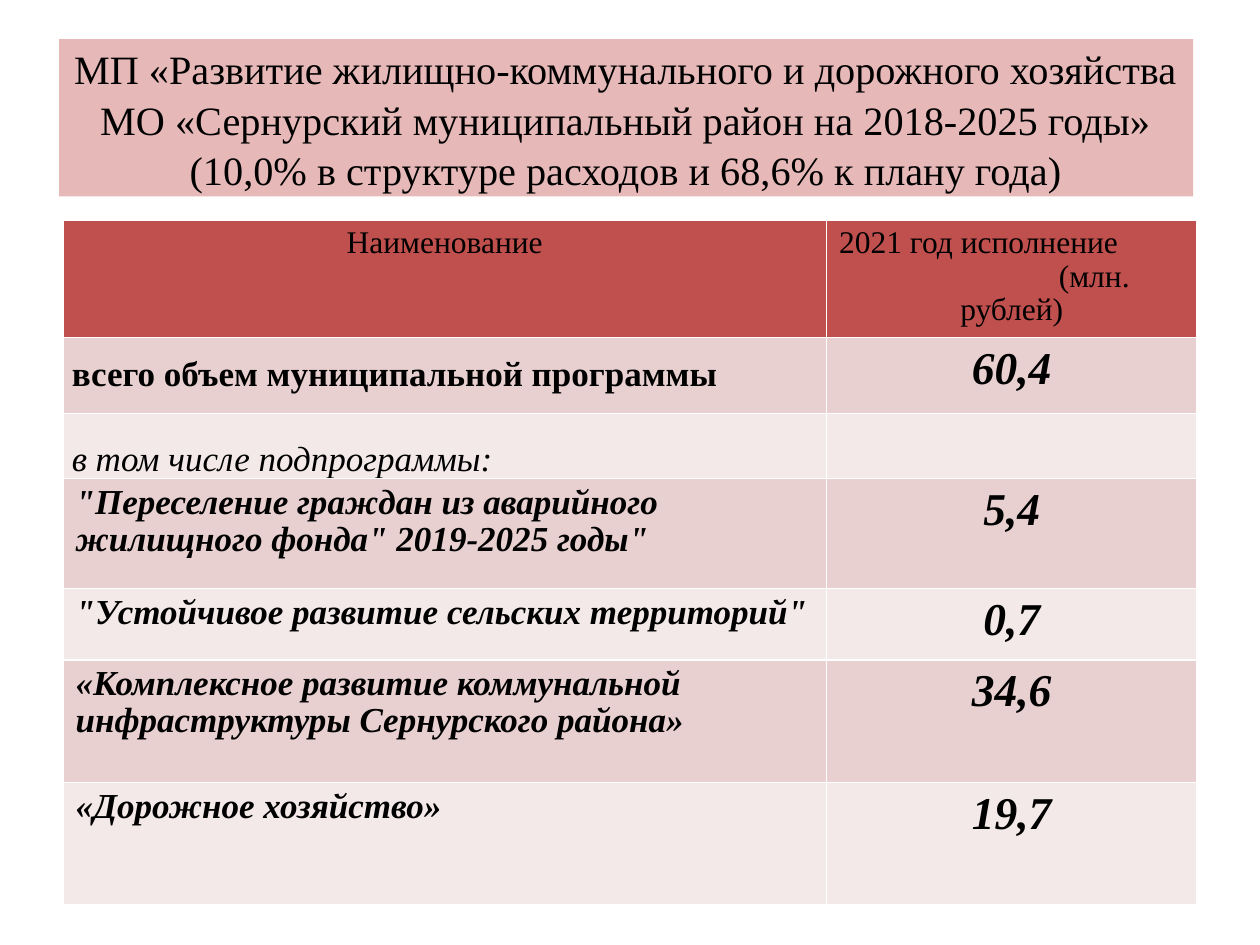
from lxml import etree
from pptx import Presentation
from pptx.dml.color import RGBColor
from pptx.enum.shapes import MSO_SHAPE
from pptx.enum.text import MSO_ANCHOR as ANCHOR, PP_ALIGN as ALIGN
from pptx.oxml.ns import qn
from pptx.util import Inches, Pt

FONT = "Times New Roman"
COLORS = {
    "title": "E6B9B8",
    "header": "C0504D",
    "band_dark": "E8D0D0",
    "band_light": "F4E9E9",
    "border": "FFFFFF",
    "text": "000000",
}


def add_run(p, text, size, bold=False, italic=False):
    r = p.add_run()
    r.text = text
    r.font.name = FONT
    r.font.size = Pt(size)
    r.font.bold = bold
    r.font.italic = italic
    r.font.color.rgb = RGBColor.from_string(COLORS["text"])


def style_cell(cell, color):
    """Give the cell thin borders on all sides and a solid fill."""
    tc_pr = cell._tc.get_or_add_tcPr()
    for side in ("lnL", "lnR", "lnT", "lnB"):
        ln = etree.SubElement(tc_pr, qn(f"a:{side}"), w=str(Pt(1)))
        fill = etree.SubElement(ln, qn("a:solidFill"))
        etree.SubElement(fill, qn("a:srgbClr"), val=COLORS["border"])
    cell.fill.solid()
    cell.fill.fore_color.rgb = RGBColor.from_string(COLORS[color])


prs = Presentation()
prs.slide_width, prs.slide_height = Inches(10), Inches(7.5)
s = prs.slides.add_slide(prs.slide_layouts[6])

# Title band
sp = s.shapes.add_shape(MSO_SHAPE.RECTANGLE, Inches(0.47), Inches(0.31),
                        Inches(9), Inches(1.25))
sp.shadow.inherit = False
sp.fill.solid()
sp.fill.fore_color.rgb = RGBColor.from_string(COLORS["title"])
sp.line.fill.background()
tf = sp.text_frame
tf.word_wrap = True
tf.vertical_anchor = ANCHOR.MIDDLE
p = tf.paragraphs[0]
p.alignment = ALIGN.CENTER
p.line_spacing = 1.05
add_run(p, "МП «Развитие жилищно-коммунального и дорожного хозяйства "
           "МО «Сернурский муниципальный район на 2018-2025 годы» "
           "(10,0% в структуре расходов и 68,6% к плану года)", 23)

# Table grid
col_widths = [6.06, 2.94]
row_heights = [0.93, 0.6, 0.52, 0.87, 0.57, 0.97, 0.97]
table = s.shapes.add_table(len(row_heights), len(col_widths),
                           Inches(0.5), Inches(1.75),
                           Inches(sum(col_widths)),
                           Inches(sum(row_heights))).table
for col, width in zip(table.columns, col_widths):
    col.width = Inches(width)
for row, height in zip(table.rows, row_heights):
    row.height = Inches(height)

# Header row
for cell in table.rows[0].cells:
    style_cell(cell, "header")
p = table.cell(0, 0).text_frame.paragraphs[0]
p.alignment = ALIGN.CENTER
p.line_spacing = 0.96
add_run(p, "Наименование", 18)

tf = table.cell(0, 1).text_frame
header_lines = [
    ("2021 год исполнение", ALIGN.LEFT, 0),
    ("(млн.", ALIGN.CENTER, 1.31),
    ("рублей)", ALIGN.CENTER, 0),
]
for i, (text, align, indent) in enumerate(header_lines):
    p = tf.add_paragraph() if i else tf.paragraphs[0]
    p.alignment = align
    p.line_spacing = 0.96
    p._p.get_or_add_pPr().set("marL", str(Inches(indent)))
    add_run(p, text, 18)

# Programme rows: name, amount, bold, italic, anchor
programmes = [
    ("всего объем муниципальной программы", "60,4", True, False, ANCHOR.MIDDLE),
    ("в том числе подпрограммы:", "", False, True, ANCHOR.BOTTOM),
    ('"Переселение граждан из аварийного жилищного фонда" 2019-2025 годы"',
     "5,4", True, True, ANCHOR.TOP),
    ('"Устойчивое развитие сельских территорий"', "0,7", True, True, ANCHOR.TOP),
    ("«Комплексное развитие коммунальной инфраструктуры Сернурского района»",
     "34,6", True, True, ANCHOR.TOP),
    ("«Дорожное хозяйство»", "19,7", True, True, ANCHOR.TOP),
]
for i, (name, amount, bold, italic, anchor) in enumerate(programmes, start=1):
    name_cell, amount_cell = table.cell(i, 0), table.cell(i, 1)
    for cell in (name_cell, amount_cell):
        style_cell(cell, "band_dark" if i % 2 else "band_light")
    name_cell.vertical_anchor = anchor
    if anchor != ANCHOR.TOP:
        name_cell.margin_left = name_cell.margin_right = Inches(0.07)
        name_cell.margin_top = name_cell.margin_bottom = 0
    p = name_cell.text_frame.paragraphs[0]
    p.line_spacing = 0.95
    add_run(p, name, 20, bold, italic)
    if amount:
        p = amount_cell.text_frame.paragraphs[0]
        p.alignment = ALIGN.CENTER
        add_run(p, amount, 26, True, True)

prs.save("out.pptx")
